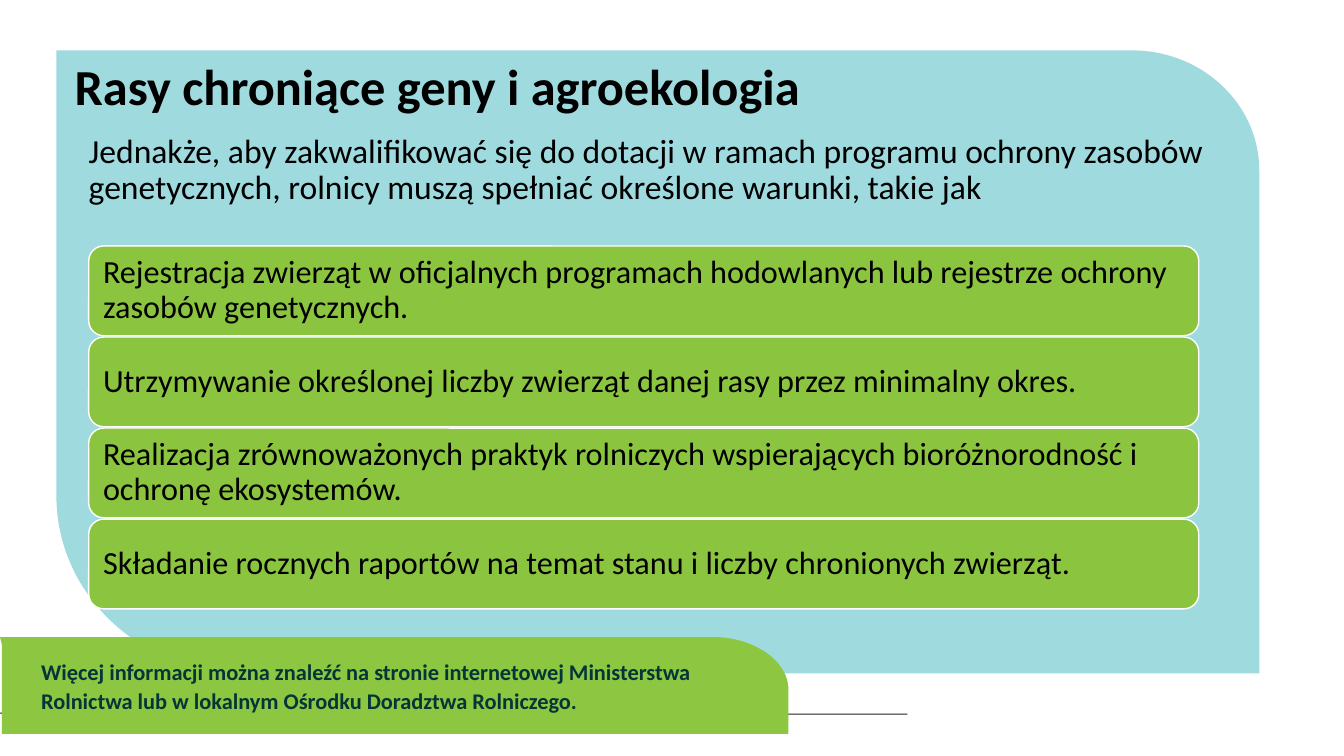
from pptx import Presentation
from pptx.dml.color import RGBColor
from pptx.enum.shapes import MSO_SHAPE
from pptx.enum.text import MSO_ANCHOR, MSO_AUTO_SIZE, PP_ALIGN
from pptx.oxml.ns import qn
from pptx.util import Pt
from lxml.etree import SubElement

EMU_PER_PX = 9144
FONT = "Calibri"
COLOURS = {
    "panel": "9FDADF",
    "banner": "8DC641",
    "card": "8BC540",
    "card_edge": "FFFFFF",
    "ground": "231F20",
    "text": "000000",
    "note": "043637",
}
TITLE = "Rasy chroniące geny i agroekologia"
INTRO = (
    "Jednakże, aby zakwalifikować się do dotacji w ramach programu ochrony zasobów "
    "genetycznych, rolnicy muszą spełniać określone warunki, takie jak"
)
CONDITIONS = [
    "Rejestracja zwierząt w oficjalnych programach hodowlanych lub rejestrze ochrony "
    "zasobów genetycznych.",
    "Utrzymywanie określonej liczby zwierząt danej rasy przez minimalny okres.",
    "Realizacja zrównoważonych praktyk rolniczych wspierających bioróżnorodność i "
    "ochronę ekosystemów.",
    "Składanie rocznych raportów na temat stanu i liczby chronionych zwierząt.",
]
NOTE = (
    "Więcej informacji można znaleźć na stronie internetowej Ministerstwa "
    "Rolnictwa lub w lokalnym Ośrodku Doradztwa Rolniczego."
)


def px(length):
    """Turn a length in px into EMU."""
    return round(length * EMU_PER_PX)


def colour(name):
    """Return the named colour."""
    return RGBColor.from_string(COLOURS[name])


def add_outline(page, left, top, segments, fill):
    """Draw a filled outline: a segment of one point is a line, of three a cubic curve."""
    points = [(px(left + x), px(top + y)) for segment in segments for x, y in segment]
    builder = page.shapes.build_freeform(*points[0], scale=1.0)
    builder.add_line_segments(points[1:], close=True)
    shape = builder.convert_to_shape()
    outline = next(shape.element.iter(qn("a:path")))
    lines = iter(outline.findall(qn("a:lnTo")))
    for segment in segments[1:]:
        first, *others = [next(lines) for _ in segment]
        if others:
            bend = SubElement(outline, qn("a:cubicBezTo"))
            first.addprevious(bend)
            for line in (first, *others):
                bend.append(line[0])
                outline.remove(line)
    shape.shadow.inherit = False
    shape.fill.solid()
    shape.fill.fore_color.rgb = colour(fill)
    shape.line.fill.background()


def place(shape, left, top, width, height):
    """Put a shape into the given box."""
    shape.left, shape.top, shape.width, shape.height = map(px, (left, top, width, height))


def write(shape, text, size, name="text", bold=False, spacing=0.9, anchor=MSO_ANCHOR.TOP):
    """Write one left-aligned paragraph and return it."""
    frame = shape.text_frame
    frame.word_wrap = True
    frame.auto_size = MSO_AUTO_SIZE.NONE
    frame.vertical_anchor = anchor
    para = frame.paragraphs[0]
    para.alignment = PP_ALIGN.LEFT
    para.line_spacing = spacing
    para.space_before = Pt(0)
    span = para.add_run()
    span.text = text
    span.font.name = FONT
    span.font.size = Pt(size)
    span.font.bold = bold
    span.font.color.rgb = colour(name)
    return para


def add_ground_line(page, left, top, width):
    """Draw the thin line along the bottom, waving slightly at its left."""
    add_outline(page, left, top, [
        [(width, 4)],
        [(443, 4)],
        [(441, 4), (280, 2), (223, 1)],
        [(155, 0), (52, 2), (14, 3)],
        [(6, 3), (1, 3), (0, 3)],
        [(0, 2)],
        [(1, 2), (6, 2), (14, 2)],
        [(52, 1), (155, 0), (223, 0)],
        [(281, 1), (441, 3), (443, 3)],
        [(width, 3)],
    ], "ground")


def add_panel(page, left, top, width, height):
    """Draw the blue panel with two opposite rounded corners."""
    add_outline(page, left, top, [
        [(0, 0)],
        [(width - 126, 0)],
        [(width - 57, 0), (width, 53), (width, 119)],
        [(width, height)],
        [(186, height)],
        [(83, height), (0, height - 79), (0, height - 176)],
    ], "panel")


def add_banner(page, left, top, width, height):
    """Draw the green banner with its note."""
    add_outline(page, left, top, [
        [(0, 0)],
        [(width - 75, 0)],
        [(width - 34, 0), (width, 24), (width, 52)],
        [(width, height)],
        [(2, height)],
        [(2, 19)],
        [(2, 15), (2, 11), (2, 8)],
    ], "banner")
    box = page.shapes.add_textbox(px(left + 31), px(top + 14), px(724), px(66))
    write(box, NOTE, 16, "note", bold=True, spacing=1.07)


def add_heading(page, left, top, width):
    """Move the title and body placeholders over the panel and fill them."""
    title, body = page.shapes.title, page.placeholders[1]
    for holder in (body, title):
        holder.element.getparent().append(holder.element)
    place(title, left + 8, top + 6, width - 25, 109)
    write(title, TITLE, 36, bold=True)
    place(body, left - 3, top + 78, width - 14, 360)
    para = write(body, INTRO, 24)
    properties = para._p.get_or_add_pPr()
    properties.set("marL", str(px(25)))
    properties.set("indent", "0")
    SubElement(properties, qn("a:buNone"))


def add_cards(page, left, top, width, height, card_height=89):
    """Spread the condition cards evenly down the box."""
    pitch = (height - card_height) / (len(CONDITIONS) - 1)
    for index, condition in enumerate(CONDITIONS):
        card = page.shapes.add_shape(
            MSO_SHAPE.ROUNDED_RECTANGLE,
            px(left), px(top + index * pitch), px(width), px(card_height),
        )
        card.shadow.inherit = False
        card.fill.solid()
        card.fill.fore_color.rgb = colour("card")
        card.line.color.rgb = colour("card_edge")
        card.line.width = Pt(1)
        card.text_frame.margin_left = card.text_frame.margin_right = px(10)
        write(card, condition, 23, anchor=MSO_ANCHOR.MIDDLE)


def main():
    """Build the slide and save it."""
    deck = Presentation()
    deck.slide_width, deck.slide_height = px(1333), px(750)
    page = deck.slides.add_slide(deck.slide_layouts[1])
    add_ground_line(page, 0, 705, 900)
    add_panel(page, 56, 50, 1193, 618)
    add_banner(page, 0, 632, 782, 96)
    add_heading(page, 56, 50, 1193)
    add_cards(page, 88, 244, 1101, 360)
    deck.save("out.pptx")


if __name__ == "__main__":
    main()
